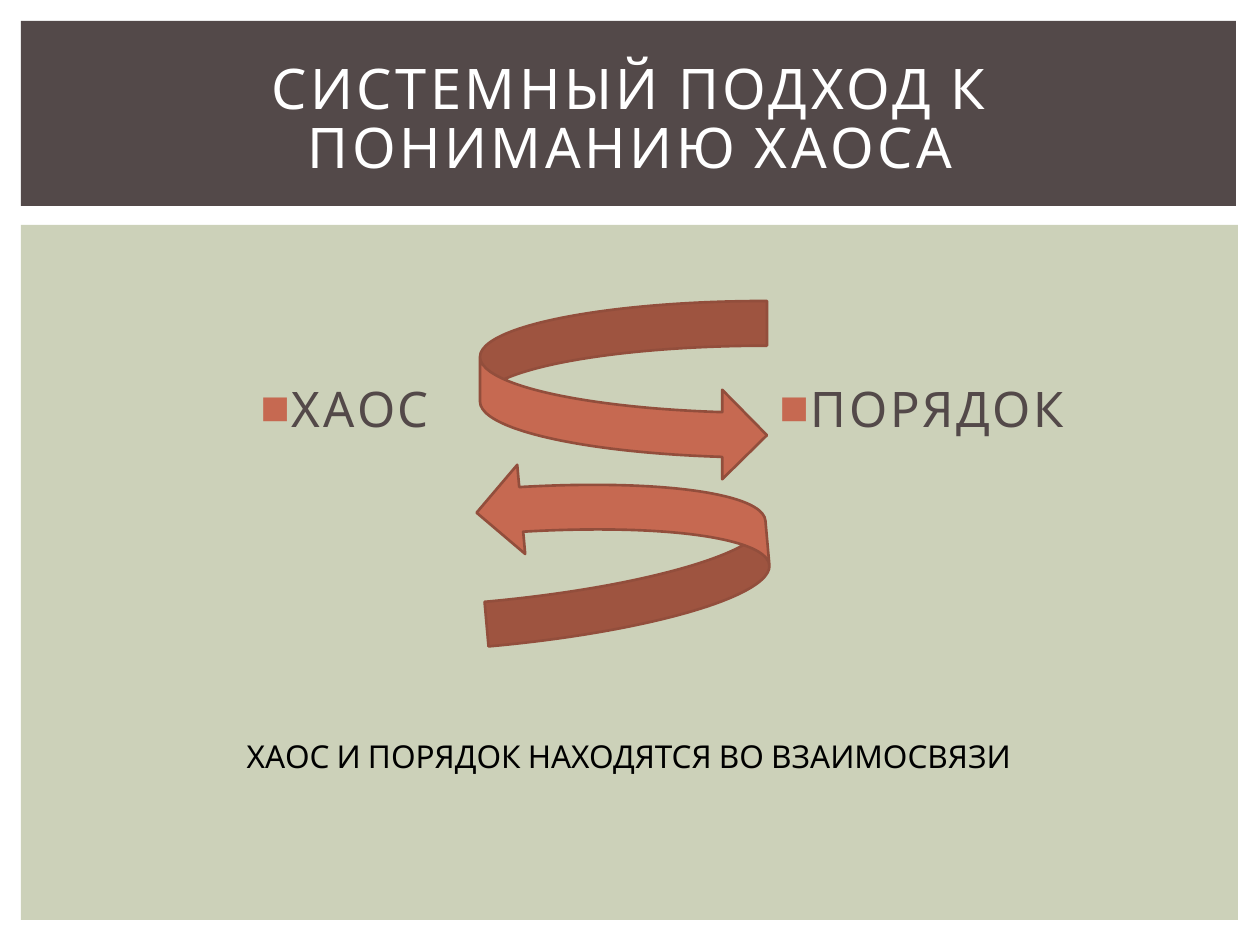
from pptx import Presentation
from pptx import util as u
from pptx.dml.color import RGBColor
from pptx.enum import shapes, text
from pptx.oxml import parse_xml
from pptx.oxml.ns import nsdecls

PX = 914400 // 126
FONT = "Cabin"
DARK, RUST = "534949", "C66951"

# Content: boxes are left, top, width, height in px
panels = [((21, 225, 1217, 695), "CCD1B9"), ((21, 21, 1215, 185), DARK)]
title = ("СИСТЕМНЫЙ ПОДХОД К ПОНИМАНИЮ ХАОСА", (53, 49, 1155, 145))
ideas = ["ХАОС", "ПОРЯДОК"]
note = ("ХАОС И ПОРЯДОК НАХОДЯТСЯ ВО ВЗАИМОСВЯЗИ", (123, 731, 1012, 50))
turns = [0, 174.9]


def hue(code):
    return RGBColor.from_string(code)


def emu(box):
    return [u.Emu(n * PX) for n in box]


def place(shape, box):
    for name, val in zip(("left", "top", "width", "height"), emu(box)):
        setattr(shape, name, val)


def draw(kind, box, fill, line=None):
    shape = slide.shapes.add_shape(kind, *emu(box))
    shape.shadow.inherit = False
    shape.fill.solid()
    shape.fill.fore_color.rgb = hue(fill)
    if line:
        shape.line.color.rgb = hue(line)
        shape.line.width = u.Pt(1.5)
    else:
        shape.line.fill.background()
    return shape


def write(shape, words, size, color, gap=0, **frame):
    tf = shape.text_frame
    form = dict(word_wrap=True, auto_size=text.MSO_AUTO_SIZE.NONE) | frame
    for name, val in form.items():
        setattr(tf, name, val)
    par = tf.paragraphs[0]
    par.alignment = text.PP_ALIGN.CENTER
    par.space_before = u.Pt(0)
    run = par.add_run()
    run.text = words
    for name, val in dict(name=FONT, size=u.Pt(size), bold=False).items():
        setattr(run.font, name, val)
    run.font.color.rgb = hue(color)
    if gap:
        run.font._element.set("spc", str(int(gap * 100)))
    return par


def bullet(par):
    ppr = par._p.get_or_add_pPr()
    ppr.set("marL", str(u.Inches(0.3)))
    ppr.set("indent", str(u.Inches(-0.25)))
    for part in (f'<a:buClr {nsdecls("a")}><a:srgbClr val="{RUST}"/></a:buClr>',
                 f'<a:buFont {nsdecls("a")} typeface="Arial"/>',
                 f'<a:buChar {nsdecls("a")} char="■"/>'):
        ppr.append(parse_xml(part))


deck = Presentation()
deck.slide_width, deck.slide_height = u.Inches(10), u.Inches(7.5)
slide = deck.slides.add_slide(deck.slide_layouts[3])
head, *lists = slide.placeholders

# Background panels, sent behind the placeholders
for i, (box, fill) in enumerate(panels):
    panel = draw(shapes.MSO_SHAPE.RECTANGLE, box, fill)
    slide.shapes._spTree.insert(2 + i, panel._element)

# Title
words, box = title
place(head, box)
par = write(head, words, 32, "FFFFFF", 2,
            vertical_anchor=text.MSO_ANCHOR.MIDDLE)
par.line_spacing = 0.88

# The two ideas, in equal columns
for i, (body, words) in enumerate(zip(lists, ideas)):
    place(body, (63 + 577 * i, 237, 557, 607))
    bullet(write(body, words, 28, DARK, 1.5, margin_top=u.Emu(141 * PX),
                 vertical_anchor=text.MSO_ANCHOR.TOP))

# Curved arrows between them
for i, turn in enumerate(turns):
    arrow = draw(shapes.MSO_SHAPE.CURVED_RIGHT_ARROW,
                 (480, 301 + 154 * i, 287, 179), RUST, "924E3C")
    arrow.rotation = turn

# Closing note
words, box = note
write(slide.shapes.add_textbox(*emu(box)), words, 18, "000000",
      auto_size=text.MSO_AUTO_SIZE.SHAPE_TO_FIT_TEXT)

deck.save("out.pptx")
